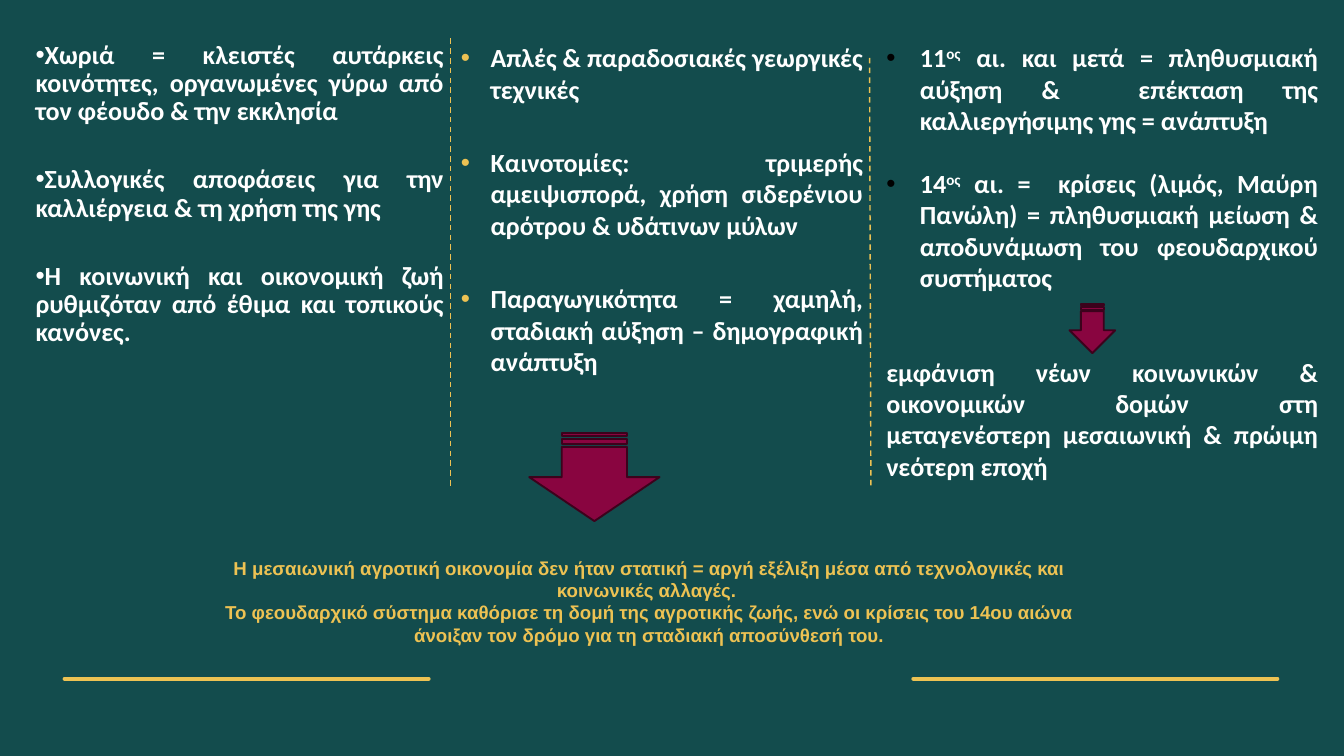
from lxml import etree
from pptx import Presentation
from pptx.dml.color import RGBColor
from pptx.enum.dml import MSO_LINE
from pptx.enum.shapes import MSO_CONNECTOR, MSO_SHAPE
from pptx.enum.text import MSO_AUTO_SIZE, PP_ALIGN
from pptx.oxml.ns import qn
from pptx.util import Inches, Pt

STRAIGHT = MSO_CONNECTOR.STRAIGHT
STRIPED_ARROW = MSO_SHAPE.STRIPED_RIGHT_ARROW
DASH = MSO_LINE.DASH
JUSTIFY, CENTER = PP_ALIGN.JUSTIFY, PP_ALIGN.CENTER
NO_AUTOFIT = MSO_AUTO_SIZE.NONE

TEAL = RGBColor(0x13, 0x4C, 0x4D)
GOLD = RGBColor(0xED, 0xC2, 0x53)
WHITE = RGBColor(0xFF, 0xFF, 0xFF)
BLACK = RGBColor(0, 0, 0)
WINE = RGBColor(0x89, 0x05, 0x40)
DARK_WINE = RGBColor(0x3C, 0x02, 0x1C)

VILLAGE = [
    "Χωριά = κλειστές αυτάρκεις κοινότητες, οργανωμένες γύρω από τον φέουδο & την εκκλησία",
    "Συλλογικές αποφάσεις για την καλλιέργεια & τη χρήση της γης",
    "Η κοινωνική και οικονομική ζωή ρυθμιζόταν από έθιμα και τοπικούς κανόνες.",
]
TECHNIQUES = [
    "Απλές & παραδοσιακές γεωργικές τεχνικές",
    "Καινοτομίες: τριμερής αμειψισπορά, χρήση σιδερένιου αρότρου & υδάτινων μύλων",
    "Παραγωγικότητα = χαμηλή, σταδιακή αύξηση – δημογραφική ανάπτυξη",
]
# Text between carets is superscript.
CENTURIES = [
    "11^ος^ αι. και μετά = πληθυσμιακή αύξηση &  επέκταση της καλλιεργήσιμης γης = ανάπτυξη",
    "14^ος^ αι. =  κρίσεις (λιμός, Μαύρη Πανώλη) = πληθυσμιακή μείωση & "
    "αποδυνάμωση του φεουδαρχικού συστήματος",
]
OUTCOME = ("εμφάνιση νέων κοινωνικών & οικονομικών δομών στη μεταγενέστερη "
           "μεσαιωνική & πρώιμη νεότερη εποχή")
CONCLUSION = [
    "Η μεσαιωνική αγροτική οικονομία δεν ήταν στατική = αργή εξέλιξη μέσα από "
    "τεχνολογικές και κοινωνικές αλλαγές. ",
    "Το φεουδαρχικό σύστημα καθόρισε τη δομή της αγροτικής ζωής, ενώ οι κρίσεις του "
    "14ου αιώνα άνοιξαν τον δρόμο για τη σταδιακή αποσύνθεσή του.",
]


def place(sp, left, top, width, height):
    sp.left, sp.top = Inches(left), Inches(top)
    sp.width, sp.height = Inches(width), Inches(height)


def add_bullet(p, margin, hanging, color):
    pPr = p._p.get_or_add_pPr()
    pPr.set("marL", str(Inches(margin)))
    pPr.set("indent", str(-Inches(hanging)))
    clr = etree.SubElement(pPr, qn("a:buClr"))
    etree.SubElement(clr, qn("a:srgbClr"), val=str(color))
    etree.SubElement(pPr, qn("a:buFont"), typeface="Arial")
    etree.SubElement(pPr, qn("a:buChar"), char="•")


def write_paragraph(p, text, align=JUSTIFY, font="Calibri", size=28, color=WHITE,
                    before=0, spacing=1.0):
    p.alignment = align
    p.line_spacing = spacing
    p.space_before, p.space_after = Pt(before), Pt(0)
    for i, part in enumerate(text.split("^")):
        r = p.add_run()
        r.text = part
        r.font.name, r.font.size, r.font.bold = font, Pt(size), True
        r.font.color.rgb = color
        if i % 2:
            r._r.get_or_add_rPr().set("baseline", "30000")


def write_list(tf, items, bullet, gap=0, **style):
    """Write one paragraph per item; bullet is (margin, hanging, colour) or None."""
    tf.word_wrap = True
    tf.auto_size = NO_AUTOFIT
    for i, text in enumerate(items):
        p = tf.add_paragraph() if i else tf.paragraphs[0]
        write_paragraph(p, text, before=gap if i else 0, **style)
        if bullet:
            add_bullet(p, *bullet)


def add_text_box(s, left, top, width, height):
    return s.shapes.add_textbox(Inches(left), Inches(top), Inches(width),
                                Inches(height)).text_frame


def add_line(s, x1, y1, x2, y2, width, dash=None):
    line = s.shapes.add_connector(STRAIGHT, Inches(x1), Inches(y1), Inches(x2), Inches(y2))
    line.line.color.rgb = GOLD
    line.line.width = Pt(width)
    spPr = line._element.spPr
    if dash:
        line.line.dash_style = dash
    else:
        spPr.find(qn("a:ln")).set("cap", "rnd")
    etree.SubElement(spPr, qn("a:effectLst"))


def add_down_arrow(s, left, top, width, height):
    """Add a striped arrow turned to point down; the box is given before the turn."""
    sp = s.shapes.add_shape(STRIPED_ARROW, Inches(left), Inches(top),
                            Inches(width), Inches(height))
    sp.rotation = 90
    sp.shadow.inherit = False
    sp.fill.solid()
    sp.fill.fore_color.rgb = WINE
    sp.line.color.rgb = DARK_WINE
    sp.line.width = Pt(2)


def main():
    prs = Presentation()
    prs.slide_width, prs.slide_height = Inches(20), Inches(11.25)
    s = prs.slides.add_slide(prs.slide_layouts.get_by_name("Two Content"))
    s.background.fill.solid()
    s.background.fill.fore_color.rgb = TEAL
    title, village, techniques = s.placeholders
    title._element.getparent().remove(title._element)

    for left in (0.96, 13.59):
        add_line(s, left, 10.1, left + 5.42, 10.1, 4)

    place(village, 0.43, 0.57, 6.27, 7.93)
    write_list(village.text_frame, VILLAGE, (0, 0, WHITE), gap=42.8, spacing=0.9)
    place(techniques, 6.7, 0.57, 6.24, 8.62)
    write_list(techniques.text_frame, TECHNIQUES, (0.5, 0.44, GOLD), gap=45)

    tf = add_text_box(s, 13.09, 0.57, 6.62, 6.7)
    write_list(tf, CENTURIES, (0.5, 0.5, BLACK), gap=34)
    write_paragraph(tf.add_paragraph(), OUTCOME, before=67.5)

    add_line(s, 6.7, 0.57, 6.7, 7.27, 1.5, DASH)
    add_line(s, 12.94, 0.86, 12.96, 7.27, 1.5, DASH)
    add_down_arrow(s, 15.89, 4.55, 0.73, 0.68)
    add_down_arrow(s, 8.19, 6.13, 1.31, 1.94)

    tf = add_text_box(s, 3.21, 8.23, 12.9, 1.45)
    write_list(tf, CONCLUSION, None, align=CENTER, font="Arial", size=20, color=GOLD)

    prs.save("out.pptx")


if __name__ == "__main__":
    main()
